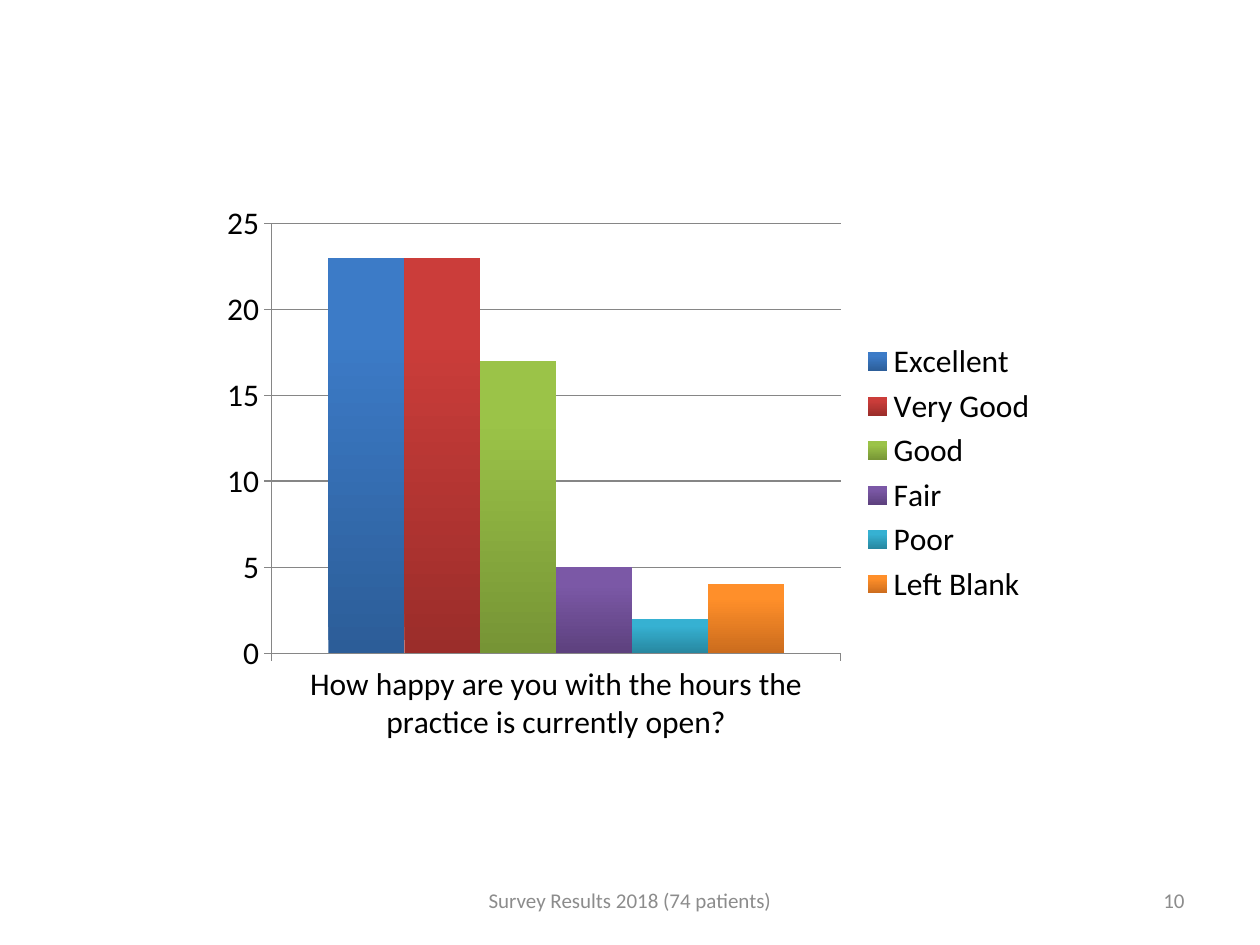
from pptx import Presentation
from pptx.chart.data import CategoryChartData
from pptx.dml.color import RGBColor
from pptx.enum.chart import XL_CHART_TYPE, XL_LEGEND_POSITION, XL_TICK_MARK
from pptx.enum.text import MSO_ANCHOR, PP_ALIGN
from pptx.util import Cm, Pt

COLUMN = XL_CHART_TYPE.COLUMN_CLUSTERED
RIGHT_SIDE = XL_LEGEND_POSITION.RIGHT
OUTSIDE = XL_TICK_MARK.OUTSIDE
MIDDLE = MSO_ANCHOR.MIDDLE
CENTER = PP_ALIGN.CENTER
RIGHT = PP_ALIGN.RIGHT

FONT = "Calibri"
BLACK = RGBColor(0x00, 0x00, 0x00)
GRAY = RGBColor(0x8C, 0x8C, 0x8C)
LINE = RGBColor(0x86, 0x86, 0x86)

QUESTION = "How happy are you with the hours the practice is currently open?"
RATINGS = [
    ("Excellent", 23, RGBColor(0x2C, 0x5D, 0x98), RGBColor(0x3C, 0x7B, 0xC7)),
    ("Very Good", 23, RGBColor(0x9B, 0x2D, 0x2A), RGBColor(0xCB, 0x3D, 0x3A)),
    ("Good", 17, RGBColor(0x76, 0x94, 0x35), RGBColor(0x9B, 0xC3, 0x48)),
    ("Fair", 5, RGBColor(0x5D, 0x41, 0x7E), RGBColor(0x7B, 0x58, 0xA6)),
    ("Poor", 2, RGBColor(0x27, 0x87, 0xA0), RGBColor(0x36, 0xB1, 0xD2)),
    ("Left Blank", 4, RGBColor(0xCB, 0x6C, 0x1D), RGBColor(0xFF, 0x8F, 0x2A)),
]


def style_font(font, size, color):
    font.name = FONT
    font.size = Pt(size)
    font.color.rgb = color


def style_line(line):
    line.color.rgb = LINE
    line.width = Pt(0.75)


def shade(fill, dark, light):
    fill.gradient()
    fill.gradient_angle = 90
    low, high = fill.gradient_stops
    low.color.rgb = dark
    high.color.rgb = light
    high.position = 0.8


def add_survey(slide):
    data = CategoryChartData()
    data.categories = [QUESTION]
    for name, count, _, _ in RATINGS:
        data.add_series(name, [count])
    frame = slide.shapes.add_chart(
        COLUMN, Cm(4.24), Cm(3.89), Cm(16.93), Cm(11.29), data)
    chart = frame.chart
    chart.has_title = False
    style_font(chart.font, 18, BLACK)
    chart.has_legend = True
    chart.legend.position = RIGHT_SIDE
    chart.legend.include_in_layout = False

    for axis in (chart.category_axis, chart.value_axis):
        axis.major_tick_mark = OUTSIDE
        style_line(axis.format.line)
    values = chart.value_axis
    values.minimum_scale = 0
    values.maximum_scale = 25
    values.major_unit = 5
    values.has_major_gridlines = True
    style_line(values.major_gridlines.format.line)

    plot = chart.plots[0]
    plot.gap_width = 150
    plot.overlap = 0
    plot.vary_by_categories = False
    for series, (_, _, dark, light) in zip(plot.series, RATINGS):
        series.invert_if_negative = False
        shade(series.format.fill, dark, light)


def add_note(slide, text, left, width, align):
    box = slide.shapes.add_textbox(Cm(left), Cm(17.65), Cm(width), Cm(1.01))
    frame = box.text_frame
    frame.word_wrap = True
    frame.vertical_anchor = MIDDLE
    frame.text = text
    para = frame.paragraphs[0]
    para.alignment = align
    style_font(para.runs[0].font, 12, GRAY)


def main():
    deck = Presentation()
    deck.slide_width = Cm(25.4)
    deck.slide_height = Cm(19.05)
    slide = deck.slides.add_slide(deck.slide_layouts[6])
    add_survey(slide)
    add_note(slide, "10", 18.2, 5.93, RIGHT)
    add_note(slide, "Survey Results 2018 (74 patients)", 8.68, 8.04, CENTER)
    deck.save("out.pptx")


if __name__ == "__main__":
    main()
